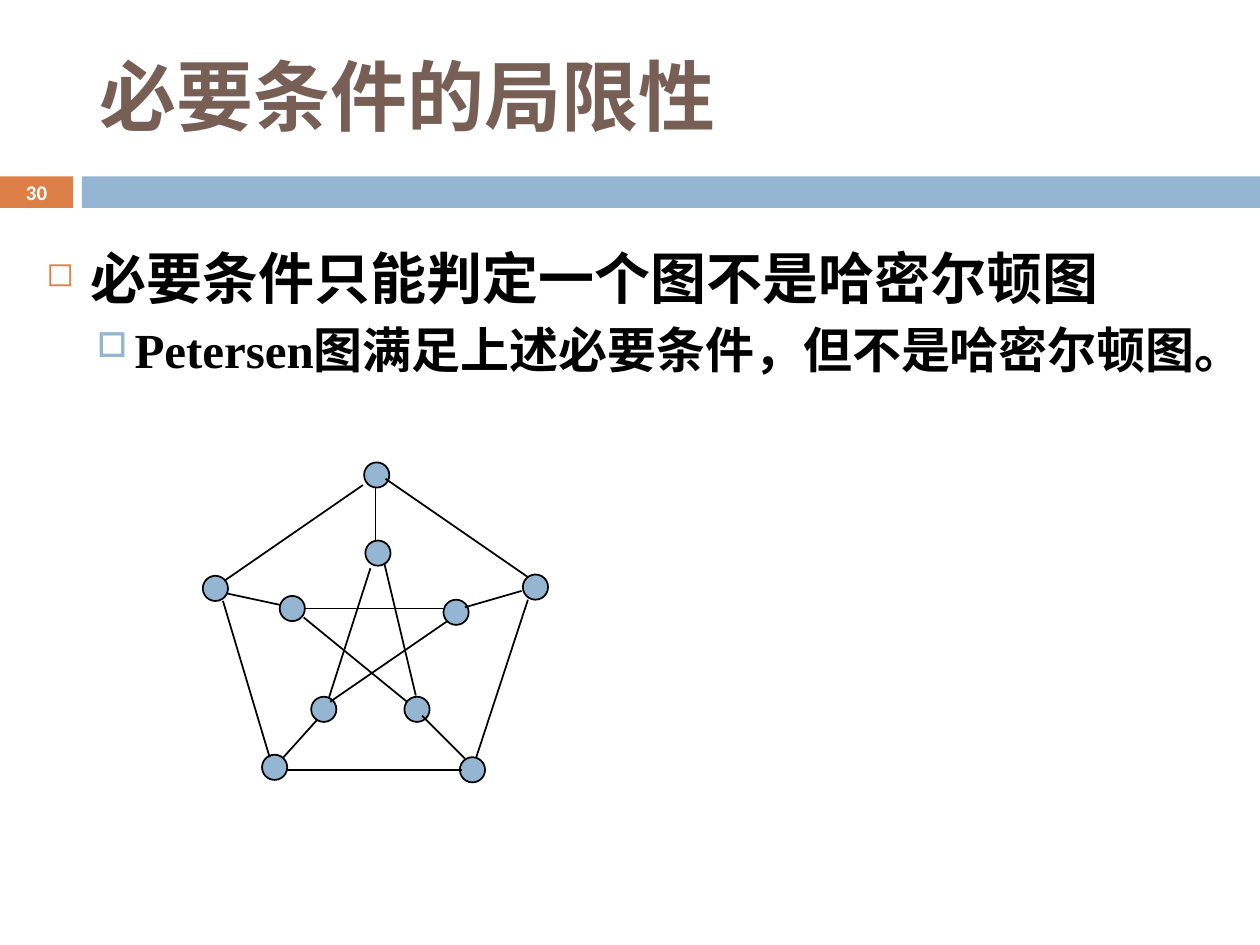
from dataclasses import dataclass

from lxml.etree import SubElement
from pptx import Presentation
from pptx.dml.color import RGBColor
from pptx.enum.shapes import MSO_CONNECTOR as Connector, MSO_SHAPE as Shape
from pptx.enum.text import MSO_ANCHOR as Anchor, MSO_AUTO_SIZE as AutoSize, PP_ALIGN as Align
from pptx.oxml.ns import qn
from pptx.util import Inches, Pt


@dataclass(frozen=True)
class Theme:
    brown: str = "775F55"
    orange: str = "DD8047"
    blue: str = "94B6D2"
    black: str = "000000"
    white: str = "FFFFFF"
    sans: str = "Calibri"
    serif: str = "Times New Roman"
    title_size: float = 44
    number_size: float = 11.9
    line_width: float = 1


THEME = Theme()

# Content
TITLE = "必要条件的局限性"
PAGE_NUMBER = "30"
POINTS = [
    dict(text="必要条件只能判定一个图不是哈密尔顿图", size=32, font=THEME.sans,
         bullet="◻", bullet_color=THEME.orange, bullet_share=60,
         left=0.35, hang=0.35, before=7),
    dict(text="Petersen图满足上述必要条件，但不是哈密尔顿图。", size=28, font=THEME.serif,
         bullet="□", bullet_color=THEME.blue, bullet_share=70,
         left=0.7, hang=0.3, before=5.5),
]

# Petersen graph: node centres and edge ends, in inches
NODE_SIZE = 0.2
OUTER_NODES = [(2.99, 3.77), (4.25, 4.66), (3.75, 6.11), (2.18, 6.09), (1.71, 4.67)]
INNER_NODES = [(3.0, 4.39), (3.62, 4.86), (3.31, 5.63), (2.57, 5.63), (2.32, 4.83)]
RING_EDGES = [
    ((3.06, 3.8), (4.19, 4.58)), ((4.19, 4.76), (3.78, 6.01)),
    ((2.28, 6.11), (3.67, 6.11)), ((1.77, 4.77), (2.14, 6.01)),
    ((1.78, 4.61), (2.88, 3.85)),
]
STAR_EDGES = [
    ((2.42, 4.83), (3.52, 4.83)), ((2.94, 4.51), (2.61, 5.54)),
    ((3.05, 4.47), (3.3, 5.52)), ((2.62, 5.57), (3.55, 4.93)),
    ((2.41, 4.9), (3.23, 5.57)),
]
SPOKE_EDGES = [
    ((2.98, 3.87), (2.98, 4.3)), ((3.69, 4.82), (4.14, 4.69)),
    ((3.35, 5.68), (3.69, 6.02)), ((2.52, 5.71), (2.25, 6.01)),
    ((1.8, 4.71), (2.22, 4.8)),
]

# Layout
SLIDE_W, SLIDE_H = 10, 7.5
BAND_TOP, BAND_H = 1.4, 0.25
NUMBER_W, BAND_GAP = 0.58, 0.07
BAND_LEFT = NUMBER_W + BAND_GAP


def box(*lengths):
    return [Inches(length) for length in lengths]


def format_text(paragraph, font, size, color):
    for run in paragraph.runs:
        run.font.name, run.font.size, run.font.bold = font, Pt(size), True
        run.font.color.rgb = RGBColor.from_string(color)


def add_filled(slide, kind, area, color):
    shape = slide.shapes.add_shape(kind, *box(*area))
    shape.shadow.inherit = False
    shape.fill.solid()
    shape.fill.fore_color.rgb = RGBColor.from_string(color)
    shape.line.fill.background()
    return shape


def add_node(slide, center):
    x, y = center
    corner = (x - NODE_SIZE / 2, y - NODE_SIZE / 2)
    node = add_filled(slide, Shape.OVAL, (*corner, NODE_SIZE, NODE_SIZE), THEME.blue)
    set_outline(node)


def add_edge(slide, start, end):
    edge = slide.shapes.add_connector(Connector.STRAIGHT, *box(*start, *end))
    set_outline(edge)
    SubElement(edge.element.spPr, qn("a:effectLst"))


def set_outline(shape):
    shape.line.color.rgb = RGBColor.from_string(THEME.black)
    shape.line.width = Pt(THEME.line_width)


def add_bullet(paragraph, point):
    props = paragraph._p.get_or_add_pPr()
    props.set("marL", str(Inches(point["left"])))
    props.set("indent", str(-Inches(point["hang"])))
    color = SubElement(props, qn("a:buClr"))
    SubElement(color, qn("a:srgbClr"), val=point["bullet_color"])
    SubElement(props, qn("a:buSzPct"), val=str(point["bullet_share"] * 1000))
    SubElement(props, qn("a:buChar"), char=point["bullet"])


def add_title(slide):
    title = slide.shapes.title
    title.left, title.top, title.width, title.height = box(0.69, 0.13, 8.25, 1.25)
    frame = title.text_frame
    frame.text = TITLE
    frame.auto_size = AutoSize.NONE
    frame.vertical_anchor = Anchor.MIDDLE
    frame.paragraphs[0].alignment = Align.LEFT
    format_text(frame.paragraphs[0], THEME.sans, THEME.title_size, THEME.brown)


def add_band(slide):
    number = add_filled(slide, Shape.RECTANGLE, (0, BAND_TOP, NUMBER_W, BAND_H), THEME.orange)
    add_filled(slide, Shape.RECTANGLE,
               (BAND_LEFT, BAND_TOP, SLIDE_W - BAND_LEFT, BAND_H), THEME.blue)
    frame = number.text_frame
    frame.text = PAGE_NUMBER
    frame.margin_top = frame.margin_bottom = 0
    frame.vertical_anchor = Anchor.MIDDLE
    frame.paragraphs[0].alignment = Align.CENTER
    format_text(frame.paragraphs[0], THEME.sans, THEME.number_size, THEME.white)


def add_points(slide):
    frame = slide.shapes.add_textbox(*box(0.27, 1.88, 9.53, 1.4)).text_frame
    frame.word_wrap = True
    for level, point in enumerate(POINTS):
        paragraph = frame.add_paragraph() if level else frame.paragraphs[0]
        paragraph.text = point["text"]
        paragraph.level = level
        paragraph.space_before = Pt(point["before"])
        add_bullet(paragraph, point)
        format_text(paragraph, point["font"], point["size"], THEME.black)


def add_graph(slide):
    for center in OUTER_NODES + INNER_NODES:
        add_node(slide, center)
    for start, end in RING_EDGES + STAR_EDGES + SPOKE_EDGES:
        add_edge(slide, start, end)


def main():
    deck = Presentation()
    deck.slide_width, deck.slide_height = box(SLIDE_W, SLIDE_H)
    slide = deck.slides.add_slide(deck.slide_layouts[5])  # title only
    add_title(slide)
    add_band(slide)
    add_points(slide)
    add_graph(slide)
    deck.save("out.pptx")


if __name__ == "__main__":
    main()
